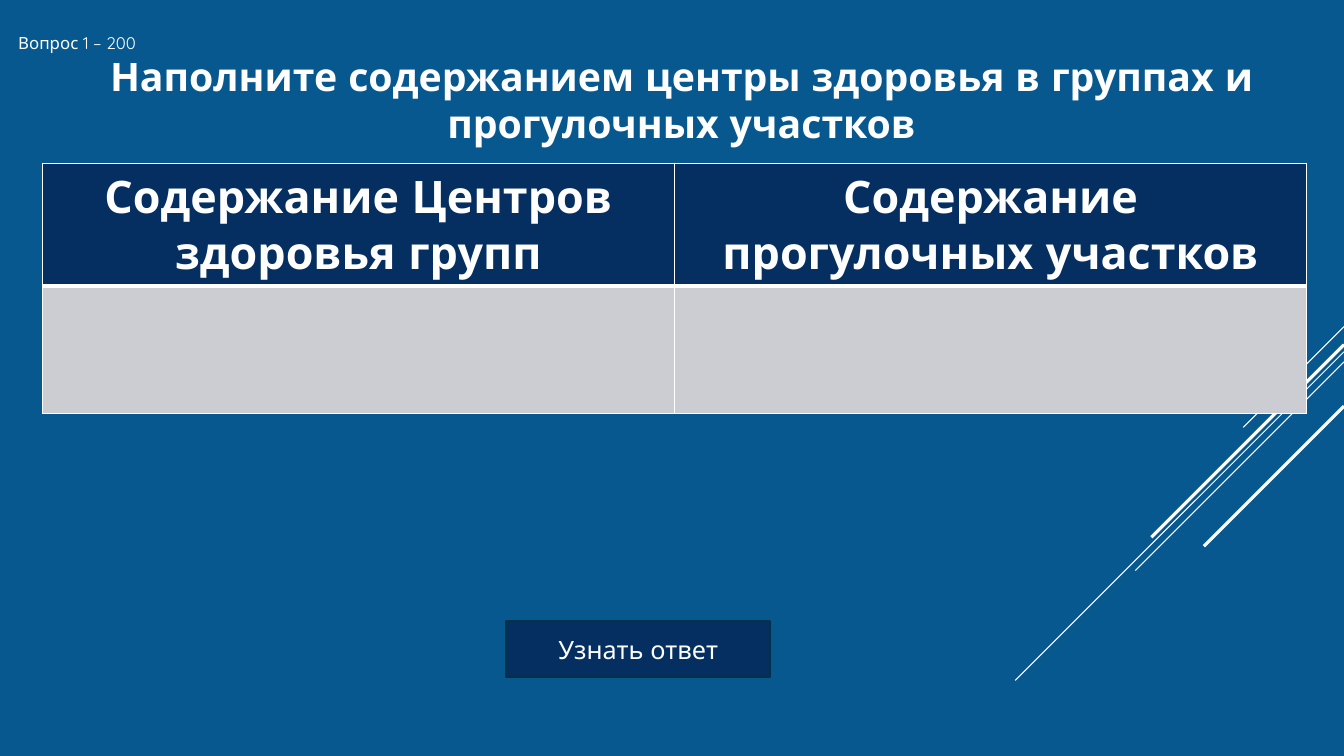
from lxml.etree import SubElement
from pptx import Presentation
from pptx.dml.color import RGBColor
from pptx.enum.shapes import MSO_CONNECTOR, MSO_SHAPE
from pptx.enum.text import MSO_ANCHOR, MSO_AUTO_SIZE, PP_ALIGN
from pptx.oxml.ns import qn
from pptx.util import Inches, Pt

QUESTION = "Вопрос 1 – 200"
TASK = "Наполните содержанием центры здоровья в группах и прогулочных участков"
HEADINGS = ["Содержание Центров здоровья групп", "Содержание прогулочных участков"]
BUTTON = "Узнать ответ"

FONT = "Quicksand"
WHITE = RGBColor(0xFF, 0xFF, 0xFF)
BLUE = RGBColor(0x06, 0x58, 0x8E)
NAVY = RGBColor(0x05, 0x2F, 0x61)
NAVY_EDGE = RGBColor(0x04, 0x31, 0x48)
GREY = RGBColor(0xCC, 0xCD, 0xD2)

SLIDE_WIDTH, SLIDE_HEIGHT = 13.33, 7.5
COLUMN_WIDTH = 6.27
ROW_HEIGHTS = [1.17, 1.27]
DIAGONALS = [
    (3.24, 1, 0.75),
    (3.49, 3.26, 0.75),
    (3.59, 2.07, 0.75),
    (3.42, 1.91, 2.25),
    (4.03, 1.39, 2.25),
]


def write(para, text, size, bold=False, align=PP_ALIGN.CENTER):
    """Put formatted text into a paragraph."""
    para.alignment = align
    span = para.add_run()
    span.text = text
    span.font.name = FONT
    span.font.size = Pt(size)
    span.font.bold = bold
    span.font.color.rgb = WHITE


def add_diagonal(page, top, run, weight):
    """Draw a 45-degree line down from the right edge."""
    line = page.shapes.add_connector(
        MSO_CONNECTOR.STRAIGHT, Inches(SLIDE_WIDTH), Inches(top),
        Inches(SLIDE_WIDTH - run), Inches(top + run))
    line.line.color.rgb = WHITE
    line.line.width = Pt(weight)
    SubElement(line._element.spPr, qn("a:effectLst"))


def style_cell(cell, color, **widths):
    """Give a cell white borders and a solid fill."""
    properties = cell._tc.get_or_add_tcPr()
    for side in ("L", "R", "T", "B"):
        border = SubElement(properties, qn(f"a:ln{side}"), w=str(Pt(widths.get(side, 1))))
        fill = SubElement(border, qn("a:solidFill"))
        SubElement(fill, qn("a:srgbClr"), val=str(WHITE))
    cell.fill.solid()
    cell.fill.fore_color.rgb = color


def add_button(page):
    """Add the answer button."""
    button = page.shapes.add_shape(
        MSO_SHAPE.RECTANGLE, Inches(5.02), Inches(6.16), Inches(2.62), Inches(0.56))
    button.shadow.inherit = False
    button.fill.solid()
    button.fill.fore_color.rgb = NAVY
    button.line.color.rgb = NAVY_EDGE
    button.line.width = Pt(1.25)
    button.text_frame.vertical_anchor = MSO_ANCHOR.MIDDLE
    write(button.text_frame.paragraphs[0], BUTTON, 18)


def fill_title(title):
    """Place the question number and the task in the title."""
    title.left, title.top = Inches(0.08), Inches(0.27)
    title.width, title.height = Inches(13.36), Inches(1.25)
    frame = title.text_frame
    frame.word_wrap = True
    frame.auto_size = MSO_AUTO_SIZE.NONE
    frame.vertical_anchor = MSO_ANCHOR.TOP
    write(frame.paragraphs[0], QUESTION, 12, align=PP_ALIGN.LEFT)
    write(frame.add_paragraph(), TASK, 28, bold=True)


def add_answer_table(page):
    """Add the table with two headings and empty answer cells."""
    table = page.shapes.add_table(
        len(ROW_HEIGHTS), len(HEADINGS), Inches(0.42), Inches(1.62),
        Inches(COLUMN_WIDTH * len(HEADINGS)), Inches(sum(ROW_HEIGHTS))).table
    for row, height in zip(table.rows, ROW_HEIGHTS):
        row.height = Inches(height)
    for index, heading in enumerate(HEADINGS):
        table.columns[index].width = Inches(COLUMN_WIDTH)
        header, answer = table.cell(0, index), table.cell(1, index)
        style_cell(header, NAVY, B=3)
        style_cell(answer, GREY, T=3)
        write(header.text_frame.paragraphs[0], heading, 32, bold=True)


def main():
    """Build and save the slide."""
    deck = Presentation()
    deck.slide_width, deck.slide_height = Inches(SLIDE_WIDTH), Inches(SLIDE_HEIGHT)
    page = deck.slides.add_slide(deck.slide_layouts[5])
    page.background.fill.solid()
    page.background.fill.fore_color.rgb = BLUE
    for top, run, weight in DIAGONALS:
        add_diagonal(page, top, run, weight)
    add_button(page)
    fill_title(page.shapes.title)
    add_answer_table(page)
    deck.save("out.pptx")


if __name__ == "__main__":
    main()
